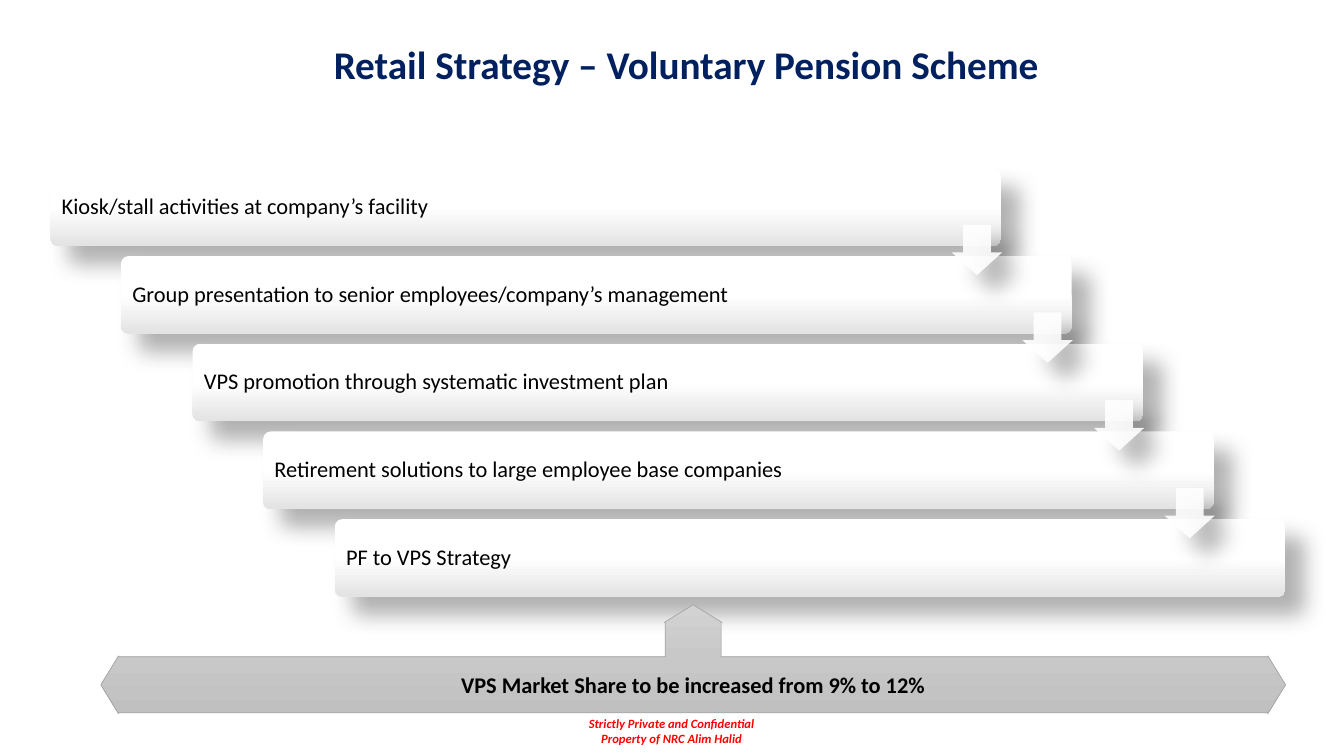
from dataclasses import dataclass

from lxml import etree
from pptx import Presentation
from pptx.dml.color import RGBColor
from pptx.enum.shapes import MSO_SHAPE as Shape
from pptx.enum.text import MSO_ANCHOR as Anchor, PP_ALIGN as Align
from pptx.oxml.ns import qn
from pptx.util import Pt

PX = 9144
FONT = "Calibri"
COLORS = {
    "title": "002060", "footer": "FF0000", "text": "000000", "white": "FFFFFF",
    "bar_end": "E3E3E3", "goal_top": "D2D2D2", "goal_mid": "C8C8C8",
    "goal_end": "C0C0C0", "goal_line": "A5A5A5", "shadow": "000000",
}


@dataclass
class Box:
    x: int
    y: int
    w: int
    h: int

    def step(self, i: int) -> "Box":
        return Box(self.x + 141 * i // 2, self.y + 87 * i, self.w, self.h)

    def emu(self) -> tuple[int, ...]:
        return tuple(v * PX for v in (self.x, self.y, self.w, self.h))


@dataclass
class Style:
    size: int
    color: str
    bold: bool = False
    italic: bool = False
    align: Align = Align.CENTER


STEPS = [
    "Kiosk/stall activities at company’s facility",
    "Group presentation to senior employees/company’s management",
    "VPS promotion through systematic investment plan",
    "Retirement solutions to large employee base companies",
    "PF to VPS Strategy",
]
FIRST_BAR = Box(50, 167, 943, 77)
FIRST_ARROW = Box(944, 223, 50, 50)


def rgb(name: str) -> RGBColor:
    return RGBColor.from_string(COLORS[name])


def write(tf, lines: list[str], style: Style) -> None:
    for i, line in enumerate(lines):
        p = tf.paragraphs[0] if i == 0 else tf.add_paragraph()
        p.alignment = style.align
        r = p.add_run()
        r.text = line
        r.font.name = FONT
        r.font.size = Pt(style.size)
        r.font.bold = style.bold
        r.font.italic = style.italic
        r.font.color.rgb = rgb(style.color)


def add_label(s, box: Box, lines: list[str], style: Style, wrap: bool = True) -> None:
    tf = s.shapes.add_textbox(*box.emu()).text_frame
    tf.word_wrap = wrap
    write(tf, lines, style)


def add_shape(s, kind: Shape, box: Box, adjustments: list[float]):
    sp = s.shapes.add_shape(kind, *box.emu())
    for i, value in enumerate(adjustments):
        sp.adjustments[i] = value
    sp.shadow.inherit = False
    sp.line.fill.background()
    return sp


def fill_gradient(sp, names: list[str]) -> None:
    sp.fill.gradient()
    sp.fill.gradient_angle = 270
    stops = next(sp._element.spPr.iter(qn("a:gsLst")))
    for stop in list(stops):
        stops.remove(stop)
    for i, name in enumerate(names):
        stop = etree.SubElement(stops, qn("a:gs"), pos=str(i * 50000))
        etree.SubElement(stop, qn("a:srgbClr"), val=COLORS[name])


def set_alpha(color, percent: int) -> None:
    etree.SubElement(color, qn("a:alpha"), val=str(percent * 1000))


def cast_shadow(sp) -> None:
    effects = sp._element.spPr.find(qn("a:effectLst"))
    shadow = etree.SubElement(
        effects, qn("a:outerShdw"), blurRad=str(Pt(15)), dist=str(Pt(18)),
        dir="2700000", algn="tl", rotWithShape="0")
    set_alpha(etree.SubElement(shadow, qn("a:srgbClr"), val=COLORS["shadow"]), 30)


def add_bar(s, box: Box, text: str) -> None:
    sp = add_shape(s, Shape.ROUNDED_RECTANGLE, box, [0.1])
    fill_gradient(sp, ["white", "white", "bar_end"])
    cast_shadow(sp)
    tf = sp.text_frame
    tf.word_wrap = True
    tf.vertical_anchor = Anchor.MIDDLE
    tf.margin_left = tf.margin_right = 9 * PX
    write(tf, [text], Style(16, "text", align=Align.LEFT))
    tf.paragraphs[0].line_spacing = 0.9


def add_arrow(s, box: Box) -> None:
    sp = add_shape(s, Shape.DOWN_ARROW, box, [0.55, 0.45])
    sp.fill.solid()
    sp.fill.fore_color.rgb = rgb("white")
    set_alpha(next(sp._element.spPr.iter(qn("a:srgbClr"))), 90)
    cast_shadow(sp)


def add_goal(s, box: Box, text: str) -> None:
    sp = add_shape(s, Shape.LEFT_RIGHT_UP_ARROW, box, [0.514, 0.265, 0.162])
    fill_gradient(sp, ["goal_top", "goal_mid", "goal_end"])
    sp.line.color.rgb = rgb("goal_line")
    sp.line.width = Pt(0.5)
    sp.text_frame.word_wrap = True
    sp.text_frame.vertical_anchor = Anchor.MIDDLE
    write(sp.text_frame, [text], Style(16, "text", bold=True))


def main() -> None:
    prs = Presentation()
    prs.slide_width, prs.slide_height = 1333 * PX, 750 * PX
    s = prs.slides.add_slide(prs.slide_layouts[6])
    add_label(s, Box(573, 705, 186, 40),
              ["Strictly Private and Confidential", "Property of NRC Alim Halid"],
              Style(9, "footer", bold=True, italic=True), wrap=False)
    add_label(s, Box(67, 35, 1227, 57), ["Retail Strategy – Voluntary Pension Scheme"],
              Style(28, "title", bold=True))
    for i, text in enumerate(STEPS):
        add_bar(s, FIRST_BAR.step(i), text)
    for i in range(len(STEPS) - 1):
        add_arrow(s, FIRST_ARROW.step(i))
    add_goal(s, Box(100, 600, 1175, 108), "VPS Market Share to be increased from 9% to 12%")
    prs.save("out.pptx")


if __name__ == "__main__":
    main()
